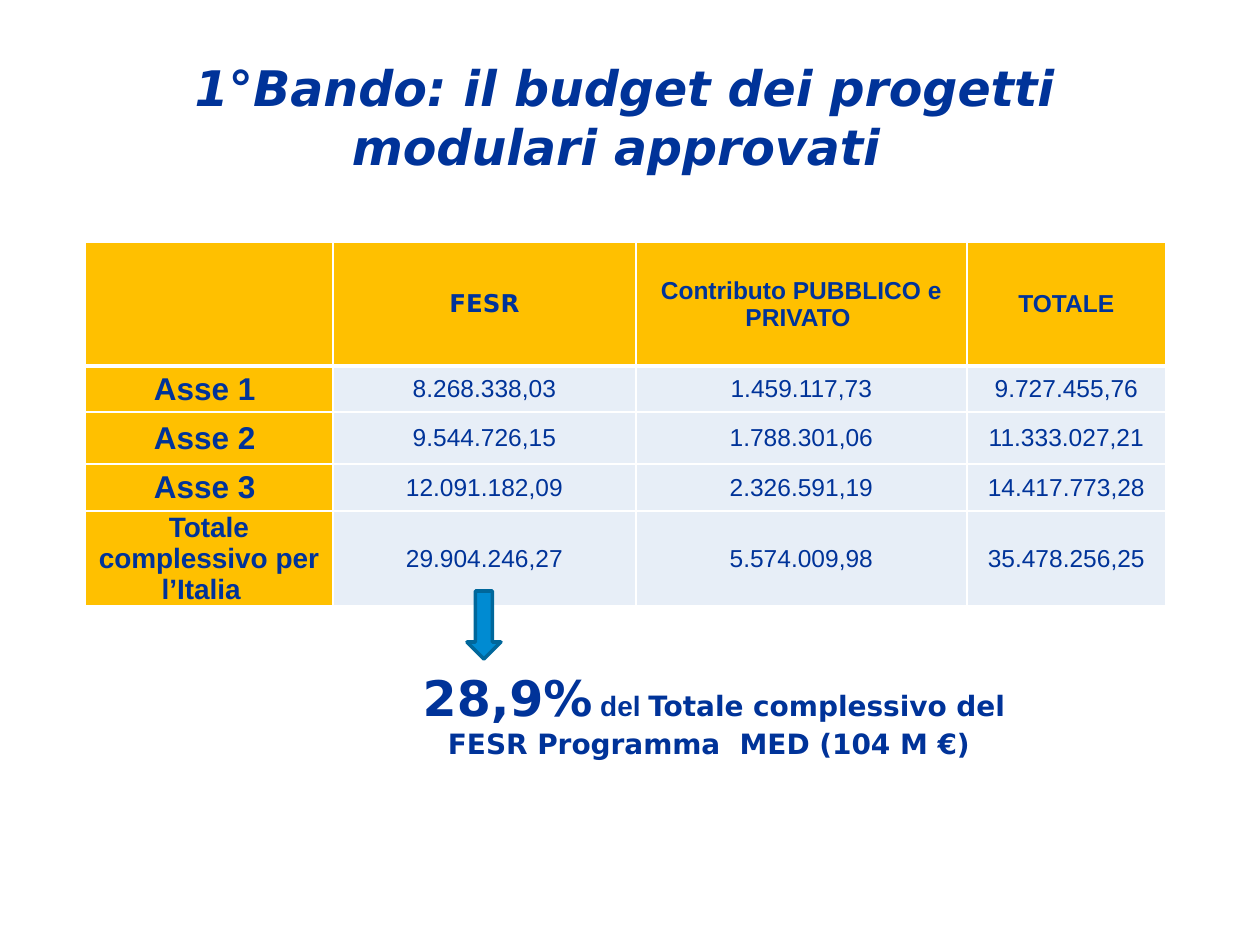
from dataclasses import dataclass

from lxml.etree import SubElement
from pptx import Presentation
from pptx.dml.color import RGBColor
from pptx.enum.shapes import MSO_SHAPE
from pptx.enum.text import MSO_ANCHOR, PP_ALIGN
from pptx.oxml.ns import qn
from pptx.slide import Slide
from pptx.util import Emu, Pt

EMU_PER_PX = 914400 // 126
COLORS = {
    "navy": "003399",
    "gold": "FFC000",
    "pale": "E7EEF7",
    "white": "FFFFFF",
    "arrow": "008BD2",
    "arrow_edge": "00679B",
}
SANS, ARIAL = "DejaVu Sans", "Arial"


def px(*lengths):
    return [Emu(length * EMU_PER_PX) for length in lengths]


def rgb(name):
    return RGBColor.from_string(COLORS[name])


@dataclass
class BudgetSlide:
    slide: Slide
    ink: str = "navy"

    def add_runs(self, frame, runs):
        """Fill a frame with one centred paragraph of (text, font, size, bold)."""
        frame.word_wrap = True
        paragraph = frame.paragraphs[0]
        paragraph.alignment = PP_ALIGN.CENTER
        for text, face, size, bold in runs:
            run = paragraph.add_run()
            run.text = text
            run.font.name = face
            run.font.size = Pt(size)
            run.font.bold = bold
            run.font.color.rgb = rgb(self.ink)
        return paragraph

    def title(self, box, text):
        heading = self.slide.shapes.title
        heading.left, heading.top, heading.width, heading.height = px(*box)
        heading.text_frame.vertical_anchor = MSO_ANCHOR.MIDDLE
        paragraph = self.add_runs(heading.text_frame, [(text, SANS, 28, True)])
        paragraph.runs[0].font.italic = True

    def borders(self, cell, bottom):
        properties = cell._tc.get_or_add_tcPr()
        widths = {"a:lnL": 1, "a:lnR": 1, "a:lnT": 1, "a:lnB": bottom}
        for index, (side, width) in enumerate(widths.items()):
            line = SubElement(properties, qn(side), w=str(Pt(width)))
            fill = SubElement(line, qn("a:solidFill"))
            SubElement(fill, qn("a:srgbClr"), val=COLORS["white"])
            properties.insert(index, line)

    def table(self, left, top, widths, heights, rows):
        grid = self.slide.shapes.add_table(
            len(heights), len(widths),
            *px(left, top, sum(widths), sum(heights))).table
        for column, width in zip(grid.columns, px(*widths)):
            column.width = width
        for row, height in zip(grid.rows, px(*heights)):
            row.height = height
        for r, row in enumerate(rows):
            for c, content in enumerate(row):
                cell = grid.cell(r, c)
                cell.vertical_anchor = MSO_ANCHOR.MIDDLE
                cell.margin_left, cell.margin_right, cell.margin_top = px(1, 1, 1)
                cell.margin_bottom = 0
                cell.fill.solid()
                cell.fill.fore_color.rgb = rgb("gold" if r == 0 or c == 0 else "pale")
                self.borders(cell, bottom=3 if r == 0 else 1)
                if content:
                    self.add_runs(cell.text_frame, [content])

    def note(self, box, top_margin, runs):
        frame = self.slide.shapes.add_textbox(*px(*box)).text_frame
        frame.margin_top = px(top_margin)[0]
        self.add_runs(frame, runs)

    def down_arrow(self, box):
        arrow = self.slide.shapes.add_shape(MSO_SHAPE.DOWN_ARROW, *px(*box))
        arrow.shadow.inherit = False
        arrow.fill.solid()
        arrow.fill.fore_color.rgb = rgb("arrow")
        arrow.line.color.rgb = rgb("arrow_edge")
        arrow.line.width = Pt(2)


def main():
    deck = Presentation()
    deck.slide_width, deck.slide_height = px(1260, 945)
    page = BudgetSlide(deck.slides.add_slide(deck.slide_layouts[5]))

    page.title((63, 38, 1123, 157),
               "1°Bando: il budget dei progetti modulari approvati ")

    # Budget by axis
    header = [None,
              ("FESR", SANS, 14, True),
              ("Contributo PUBBLICO e PRIVATO ", ARIAL, 14, True),
              ("TOTALE", ARIAL, 14, True)]
    budgets = [
        ("Asse 1 ", 18, "8.268.338,03", "1.459.117,73", "9.727.455,76"),
        ("Asse 2 ", 18, "9.544.726,15", "1.788.301,06", "11.333.027,21"),
        ("Asse 3 ", 18, "12.091.182,09", "2.326.591,19", "14.417.773,28"),
        ("Totale complessivo per l’Italia  ", 16,
         "29.904.246,27", "5.574.009,98", "35.478.256,25"),
    ]
    body = [[(axis, ARIAL, size, True)]
            + [(amount, ARIAL, 14, False) for amount in amounts]
            for axis, size, *amounts in budgets]
    page.table(85, 242, (248, 303, 331, 199), (124, 46, 52, 47, 94),
               [header] + body)

    # Share of the programme funds
    page.note((372, 630, 684, 178), 38, [
        ("28,9%", SANS, 28, True),
        (" del ", ARIAL, 16, True),
        ("Totale complessivo del FESR Programma  MED (104 M €) ", SANS, 16, True),
    ])
    page.down_arrow((467, 591, 34, 68))

    deck.save("out.pptx")


if __name__ == "__main__":
    main()
